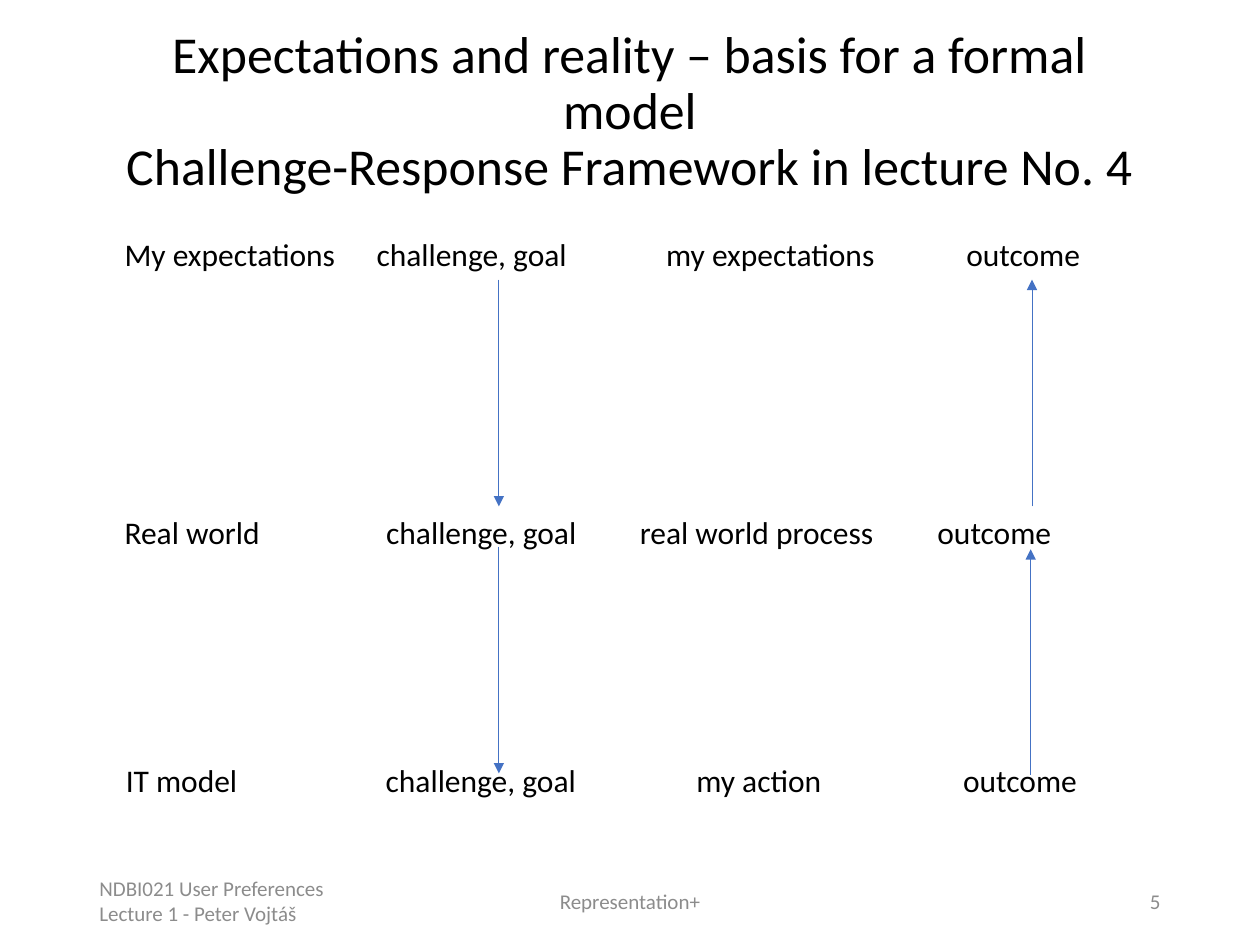
from dataclasses import dataclass
from typing import NamedTuple

from lxml.etree import SubElement
from pptx import Presentation
from pptx.dml.color import RGBColor
from pptx.enum.shapes import MSO_CONNECTOR as Connector
from pptx.enum.text import MSO_ANCHOR as Anchor, MSO_AUTO_SIZE as AutoSize, PP_ALIGN as Align
from pptx.oxml.ns import qn
from pptx.util import Pt


class Box(NamedTuple):
    left: float
    top: float
    width: float
    height: float


@dataclass(frozen=True)
class Theme:
    font: str = "Calibri"
    ink: RGBColor = RGBColor(0x00, 0x00, 0x00)
    muted: RGBColor = RGBColor(0x8C, 0x8C, 0x8C)
    arrow: RGBColor = RGBColor(0x44, 0x72, 0xC4)
    title_size: float = 29.6
    body_size: float = 18
    footer_size: float = 12
    arrow_width: float = 0.5


THEME = Theme()
TITLE = (
    "Expectations and reality – basis for a formal model",
    "Challenge-Response Framework in lecture No. 4",
)
# Row offset within the diagram, its words, and their tab stops
LEVELS = (
    (0, 0, ("My expectations", "challenge, goal", "my expectations", "outcome"),
     (144, 309.5, 481)),
    (0, 158.4, ("Real world", "challenge, goal", "real world process", "outcome"),
     (149.5, 294.5, 464.5)),
    (0.7, 300.2, ("IT model", "challenge, goal", "my action", "outcome"),
     (148.5, 326, 478.5)),
)
# Arrow start and end within the diagram
ARROWS = (
    ((221, 28.8), (221, 158.4)),
    ((525.6, 158.4), (525.6, 28.8)),
    ((221, 181.4), (221, 311)),
    ((524.9, 311.8), (524.9, 182.9)),
)
FOOTERS = (
    (0, 162, Align.LEFT, "NDBI021 User Preferences Lecture 1 - Peter Vojtáš"),
    (188.6, 243.4, Align.CENTER, "Representation+"),
    (458.6, 162, Align.RIGHT, "5"),
)


def place(shape, box):
    for name, value in box._asdict().items():
        setattr(shape, name, Pt(value))


def write(frame, lines, size, color, align=Align.LEFT, anchor=Anchor.TOP, spacing=None):
    frame_format = {"word_wrap": True, "auto_size": AutoSize.NONE, "vertical_anchor": anchor}
    for name, value in frame_format.items():
        setattr(frame, name, value)
    for index, line in enumerate(lines):
        para = frame.add_paragraph() if index else frame.paragraphs[0]
        para.alignment = align
        para.line_spacing = spacing
        span = para.add_run()
        span.text = line
        for name, value in {"name": THEME.font, "size": Pt(size)}.items():
            setattr(span.font, name, value)
        span.font.color.rgb = color


def add_text(page, box, text, size, color, **text_format):
    shape = page.shapes.add_textbox(*map(Pt, box))
    write(shape.text_frame, [text], size, color, **text_format)
    return shape


def set_tabs(para, stops):
    tabs = SubElement(para._p.get_or_add_pPr(), qn("a:tabLst"))
    for stop in stops:
        SubElement(tabs, qn("a:tab"), pos=str(int(Pt(stop))), algn="l")


def add_arrow(page, start, end):
    arrow = page.shapes.add_connector(Connector.STRAIGHT, *map(Pt, start + end))
    arrow.line.color.rgb = THEME.arrow
    arrow.line.width = Pt(THEME.arrow_width)
    SubElement(arrow.line._get_or_add_ln(), qn("a:tailEnd"), type="triangle")
    SubElement(arrow._element.spPr, qn("a:effectLst"))


def add_title(page, box):
    title = page.shapes.title
    place(title, box)
    write(title.text_frame, TITLE, THEME.title_size, THEME.ink,
          align=Align.CENTER, spacing=0.9)


def add_diagram(page, box):
    for x, y, words, stops in LEVELS:
        row_box = Box(box.left + x, box.top + y, box.width, 28.8)
        row = add_text(page, row_box, "\t".join(words), THEME.body_size, THEME.ink)
        set_tabs(row.text_frame.paragraphs[0], stops)
    for ends in ARROWS:
        add_arrow(page, *((box.left + x, box.top + y) for x, y in ends))


def add_footer(page, box):
    for x, width, align, text in FOOTERS:
        add_text(page, Box(box.left + x, box.top, width, box.height), text,
                 THEME.footer_size, THEME.muted, align=align, anchor=Anchor.MIDDLE)


def main():
    deck = Presentation()
    deck.slide_width, deck.slide_height = Pt(720), Pt(540)
    page = deck.slides.add_slide(deck.slide_layouts.get_by_name("Title Only"))
    add_title(page, Box(49.7, 13, 620.6, 77.8))
    add_diagram(page, Box(64.1, 131, 580.3, 329))
    add_footer(page, Box(49.7, 500.4, 620.6, 28.8))
    deck.save("out.pptx")


if __name__ == "__main__":
    main()
